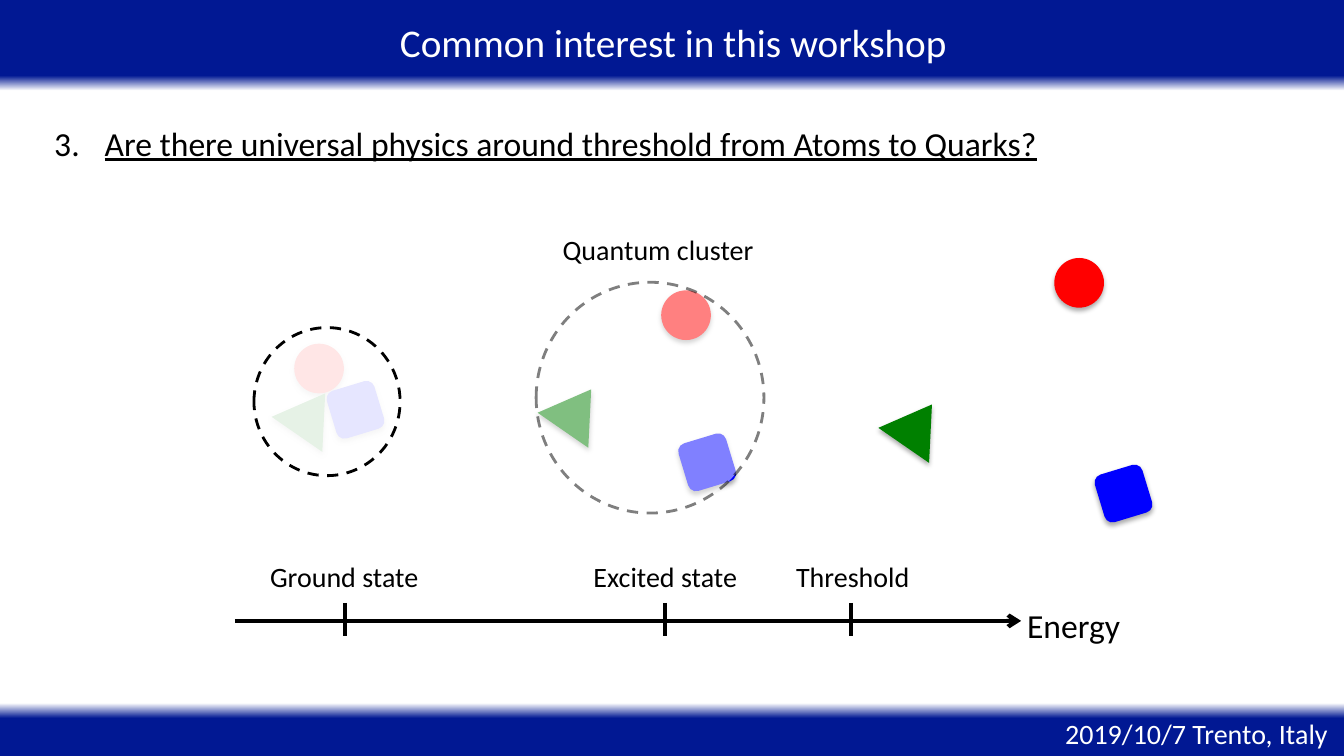
from lxml import etree
from pptx import Presentation
from pptx.dml.color import RGBColor
from pptx.enum import dml, shapes, text
from pptx.oxml.ns import qn
from pptx.util import Pt

NAVY, WHITE, BLACK = "011893", "FFFFFF", "000000"
FADE = [(0, NAVY), (10, NAVY), (12, WHITE), (93, WHITE), (95, NAVY), (100, NAVY)]
KINDS = [
    (shapes.MSO_SHAPE.OVAL, "FF0000", 35.5, 0),
    (shapes.MSO_SHAPE.ROUNDED_RECTANGLE, "0000FF", 35.5, 343.1),
    (shapes.MSO_SHAPE.ISOSCELES_TRIANGLE, "008000", 44, 34.6),
]
GROUND = [(210.2, 245.5), (236.2, 275), (200.2, 277.9)]
EXCITED = [(472.3, 207.4), (487.4, 312.5), (390.2, 275)]
FREE = [(753.1, 184.3), (784.8, 334.8), (633.6, 285.8)]
LEVELS = [
    ("Ground state", 246.2, 185, 121.7),
    ("Excited state", 475.2, 416.2, 118),
    ("Threshold", 607.7, 560.9, 96.5),
]


def rgb(code):
    """Turn a hex string into a colour."""
    return RGBColor.from_string(code)


def add(parent, tag, **attrs):
    """Append a DrawingML child element."""
    return etree.SubElement(parent, qn("a:" + tag), {k: str(v) for k, v in attrs.items()})


def paint(slide):
    """Fill the background with the banded gradient."""
    fill = slide.background.fill
    fill.gradient()
    fill.gradient_angle = 270
    stops = next(slide.element.iter(qn("a:gsLst")))
    for stop in list(stops):
        stops.remove(stop)
    for place, code in FADE:
        add(add(stops, "gs", pos=place * 1000), "srgbClr", val=code)


def label(slide, words, box, size=20, code=BLACK, align=text.PP_ALIGN.CENTER):
    """Add one line of text and return its paragraph."""
    frame = slide.shapes.add_textbox(*map(Pt, box)).text_frame
    frame.word_wrap = False
    frame.auto_size = text.MSO_AUTO_SIZE.SHAPE_TO_FIT_TEXT
    frame.text = words
    para = frame.paragraphs[0]
    para.alignment = align
    font = para.runs[0].font
    font.name, font.size = "Calibri", Pt(size)
    font.color.rgb = rgb(code)
    return para


def number(para, start):
    """Number a paragraph with a hanging indent."""
    props = para._p.get_or_add_pPr()
    props.set("marL", str(Pt(36)))
    props.set("indent", str(-Pt(36)))
    add(props, "buFont", typeface="+mj-lt")
    add(props, "buAutoNum", type="arabicPeriod", startAt=start)


def trio(tree, spots):
    """Add the disc, the square and the triangle with soft shadows."""
    for (kind, code, width, turn), (x, y) in zip(KINDS, spots):
        part = tree.add_shape(kind, Pt(x), Pt(y), Pt(width), Pt(35.5))
        part.rotation = turn
        part.fill.solid()
        part.fill.fore_color.rgb = rgb(code)
        part.line.fill.background()
        part.shadow.inherit = False
        effects = part._element.spPr.find(qn("a:effectLst"))
        shade = add(effects, "outerShdw", blurRad=Pt(3.5), dist=Pt(2.2),
                    dir=5400000, rotWithShape=0)
        add(add(shade, "srgbClr", val=BLACK), "alpha", val=32000)


def ring(tree, box, veil, ink):
    """Add a dashed ring over a translucent white veil."""
    loop = tree.add_shape(shapes.MSO_SHAPE.OVAL, *map(Pt, box))
    loop.shadow.inherit = False
    loop.fill.solid()
    loop.fill.fore_color.rgb = rgb(WHITE)
    loop.line.width = Pt(2)
    loop.line.color.rgb = rgb(BLACK)
    loop.line.dash_style = dml.MSO_LINE.DASH
    for tint, share in zip(loop._element.spPr.iter(qn("a:srgbClr")), (veil, ink)):
        add(tint, "alpha", val=share * 1000)


def cluster(slide, spots, box, veil, ink):
    """Group three particles with their ring."""
    tree = slide.shapes.add_group_shape().shapes
    trio(tree, spots)
    ring(tree, box, veil, ink)


def rule(slide, ends, arrow=False):
    """Draw a thick straight line."""
    line = slide.shapes.add_connector(shapes.MSO_CONNECTOR.STRAIGHT, *map(Pt, ends))
    line.line.width = Pt(3)
    line.line.color.rgb = rgb(BLACK)
    props = line._element.spPr
    if arrow:
        add(props.find(qn("a:ln")), "tailEnd", type="arrow")
    add(props, "effectLst")


def main():
    """Build the slide and save it."""
    deck = Presentation()
    deck.slide_width, deck.slide_height = Pt(960), Pt(540)
    slide = deck.slides.add_slide(deck.slide_layouts[6])
    left = text.PP_ALIGN.LEFT
    paint(slide)
    label(slide, "Common interest in this workshop", (278.6, 9.4, 409.7, 41), 28, WHITE, left)
    cluster(slide, GROUND, (181.4, 234, 104.4, 105.8), 90, 100)
    cluster(slide, EXCITED, (383, 201.6, 162.7, 164.9), 50, 50)
    trio(slide.shapes, FREE)
    rule(slide, (167.8, 443.5, 729.4, 443.5), True)
    label(slide, "Energy", (725.8, 428.4, 82.1, 36), 24)
    for words, x, start, width in LEVELS:
        rule(slide, (x, 430.6, x, 454.3))
        label(slide, words, (start, 396, width, 31.7))
    label(slide, "Quantum cluster", (393.8, 162.7, 152.6, 31.7))
    ask = label(slide, "Are there universal physics around threshold from Atoms to Quarks?",
                (31.7, 84.2, 722.9, 36), 24, BLACK, left)
    number(ask, 3)
    ask.runs[0].font.underline = True
    label(slide, "2019/10/7 Trento, Italy", (753.8, 508.3, 203.8, 31.7), 20, WHITE, left)
    deck.save("out.pptx")


if __name__ == "__main__":
    main()
